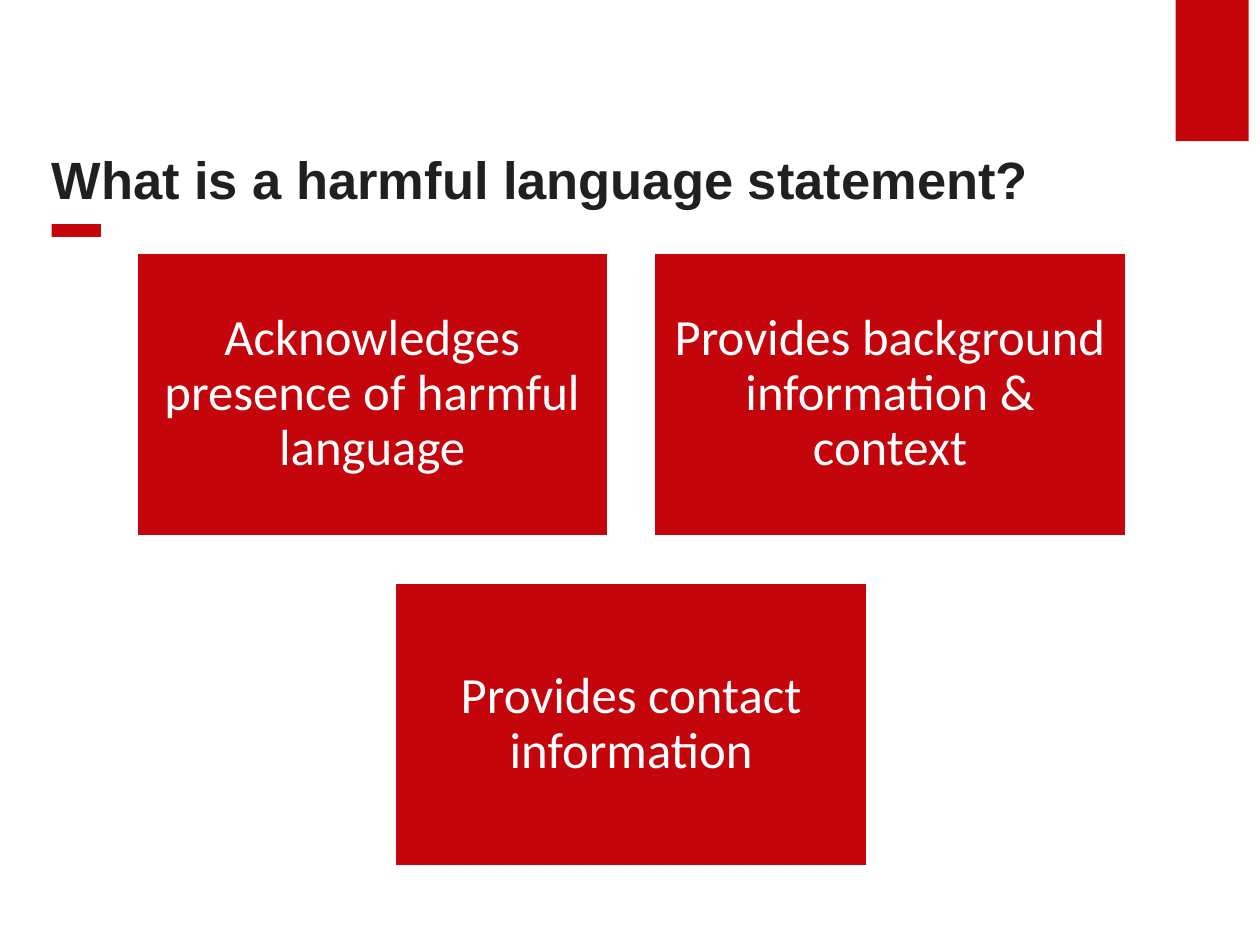
from pptx import Presentation
from pptx.dml.color import RGBColor
from pptx.enum.shapes import MSO_SHAPE as Shape
from pptx.enum.text import MSO_ANCHOR as Anchor, PP_ALIGN as Align
from pptx.util import Inches, Pt

RED = RGBColor(0xC5, 0x05, 0x0C)
WHITE = RGBColor(0xFF, 0xFF, 0xFF)
DARK = RGBColor(0x20, 0x20, 0x20)

# Content
TITLE = "What is a harmful language statement?"
CARD_ROWS = [
    ["Acknowledges presence of harmful language",
     "Provides background information & context"],
    ["Provides contact information"],
]
ACCENTS = [(9.33, 0, 0.58, 1.12), (0.41, 1.78, 0.39, 0.1)]

# Card grid, in inches; each row is centred on the same axis
CARD_WIDTH, CARD_HEIGHT = 3.74, 2.24
GAP_X, GAP_Y = 0.37, 0.38
GRID_CENTER, GRID_TOP = 5.01, 2.01


def add_rectangle(page, left, top, width, height, outline=None):
    box = page.shapes.add_shape(Shape.RECTANGLE, *map(Inches, (left, top, width, height)))
    box.shadow.inherit = False
    box.fill.solid()
    box.fill.fore_color.rgb = RED
    if outline is None:
        box.line.fill.background()
    else:
        box.line.color.rgb = outline
        box.line.width = Pt(1)
    return box


def write_text(box, text, *, font, size, color, bold=False,
               align=Align.LEFT, anchor=Anchor.MIDDLE, insets=(0, 0, 0, 0)):
    frame = box.text_frame
    frame.word_wrap = True
    frame.vertical_anchor = anchor
    (frame.margin_left, frame.margin_top,
     frame.margin_right, frame.margin_bottom) = map(Inches, insets)
    para = frame.paragraphs[0]
    para.alignment = align
    para.line_spacing = 0.9
    span = para.add_run()
    span.text = text
    span.font.name = font
    span.font.size = Pt(size)
    span.font.bold = bold
    span.font.color.rgb = color


def main():
    deck = Presentation()
    deck.slide_width, deck.slide_height = Inches(10), Inches(7.5)
    page = deck.slides.add_slide(deck.slide_layouts[6])

    # Corner block and title underline
    for accent in ACCENTS:
        add_rectangle(page, *accent)

    # Title
    title = page.shapes.add_textbox(*map(Inches, (0.41, 0.5, 8.75, 1.17)))
    write_text(title, TITLE, font="Arial", size=30, color=DARK, bold=True,
               anchor=Anchor.BOTTOM, insets=(0, 0.05, 0.1, 0))

    # Cards
    for row, texts in enumerate(CARD_ROWS):
        row_width = len(texts) * (CARD_WIDTH + GAP_X) - GAP_X
        top = GRID_TOP + row * (CARD_HEIGHT + GAP_Y)
        for column, text in enumerate(texts):
            left = GRID_CENTER - row_width / 2 + column * (CARD_WIDTH + GAP_X)
            card = add_rectangle(page, left, top, CARD_WIDTH, CARD_HEIGHT, outline=WHITE)
            write_text(card, text, font="Calibri", size=29, color=WHITE,
                       align=Align.CENTER, insets=(0.12,) * 4)

    deck.save("out.pptx")


if __name__ == "__main__":
    main()
